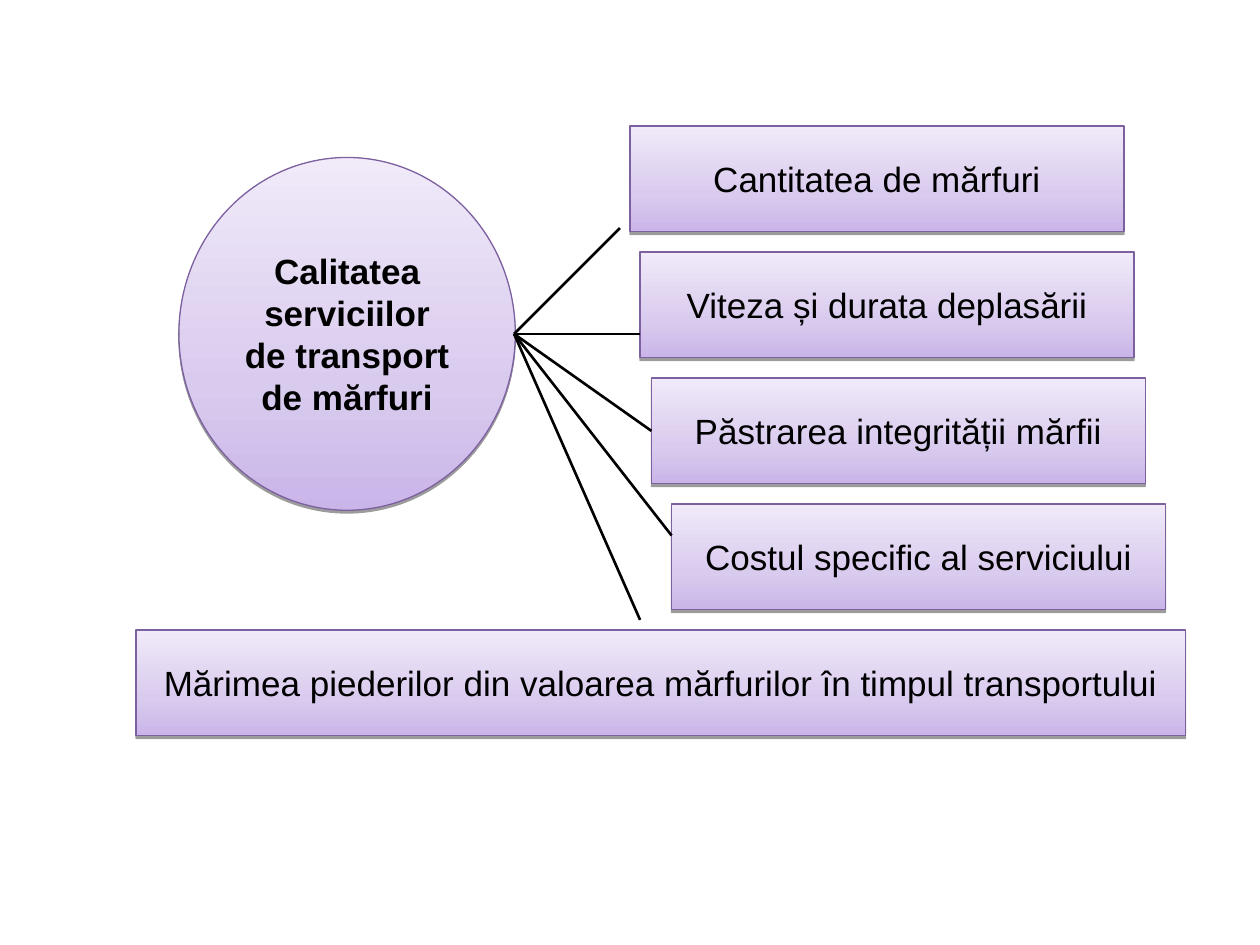
from copy import deepcopy

from lxml.etree import SubElement
from pptx import Presentation
from pptx.dml.color import RGBColor
from pptx.enum.shapes import MSO_CONNECTOR as Link, MSO_SHAPE as Form
from pptx.enum.text import MSO_ANCHOR as Anchor, PP_ALIGN as Align
from pptx.oxml.ns import qn
from pptx.util import Inches, Pt

BLACK = RGBColor(0x00, 0x00, 0x00)
EDGE = RGBColor(0x7D, 0x60, 0xA0)
STOPS = [
    (0, RGBColor(0xC9, 0xB5, 0xE8)),
    (0.35, RGBColor(0xD9, 0xCB, 0xEE)),
    (1, RGBColor(0xF0, 0xEA, 0xF9)),
]

deck = Presentation()
deck.slide_width, deck.slide_height = Inches(10), Inches(7.5)
slide = deck.slides.add_slide(deck.slide_layouts[6])


def add_node(form, left, top, width, height, text, bold=False):
    node = slide.shapes.add_shape(
        form, Inches(left), Inches(top), Inches(width), Inches(height))

    # Lilac gradient, darkest at the bottom
    node.fill.gradient()
    node.fill.gradient_angle = 90
    stops = node._element.spPr.find(".//" + qn("a:gsLst"))
    stops.append(deepcopy(stops[-1]))
    for stop, (place, color) in zip(node.fill.gradient_stops, STOPS):
        stop.position = place
        stop.color.rgb = color
    node.line.color.rgb = EDGE
    node.line.width = Pt(0.75)

    # Soft grey shadow straight below
    node.shadow.inherit = False
    effect = node._element.spPr.find(qn("a:effectLst"))
    shade = SubElement(effect, qn("a:outerShdw"), blurRad="0",
                       dist=str(Pt(1.6)), dir="5400000", rotWithShape="0")
    tint = SubElement(shade, qn("a:srgbClr"), val=str(BLACK))
    SubElement(tint, qn("a:alpha"), val="38000")

    # Centred label
    frame = node.text_frame
    frame.word_wrap = True
    frame.vertical_anchor = Anchor.MIDDLE
    para = frame.paragraphs[0]
    para.alignment = Align.CENTER
    run = para.add_run()
    run.text = text
    run.font.name = "Arial"
    run.font.size = Pt(20)
    run.font.bold = bold
    run.font.color.rgb = BLACK
    return node


# Quality factors, one box per inch down the slide
FACTORS = [
    (5, 3.92, "Cantitatea de mărfuri"),
    (5.08, 3.92, "Viteza și durata deplasării"),
    (5.17, 3.92, "Păstrarea integrității mărfii"),
    (5.33, 3.92, "Costul specific al serviciului"),
    (1.08, 8.33, "Mărimea piederilor din valoarea mărfurilor în timpul transportului"),
]
boxes = [add_node(Form.RECTANGLE, left, top, width, 0.84, text)
         for top, (left, width, text) in enumerate(FACTORS, 1)]

# Central topic
add_node(Form.OVAL, 1.42, 1.25, 2.67, 2.8,
         "Calitatea serviciilor de transport de mărfuri", bold=True)

# Lines from the factors to the right side of the circle
HUB = (Inches(4.08), Inches(2.65))
ENDS = [(4.92, 1.81), (5.08, 2.65), (5.17, 3.42), (5.33, 4.25), (5.08, 4.92)]
lines = []
for x, y in ENDS:
    line = slide.shapes.add_connector(
        Link.STRAIGHT, Inches(x), Inches(y), *HUB)
    line.line.color.rgb = BLACK
    line.line.width = Pt(1.5)
    SubElement(line._element.spPr, qn("a:effectLst"))
    lines.append(line)
lines[2].begin_connect(boxes[2], 1)

deck.save("out.pptx")
